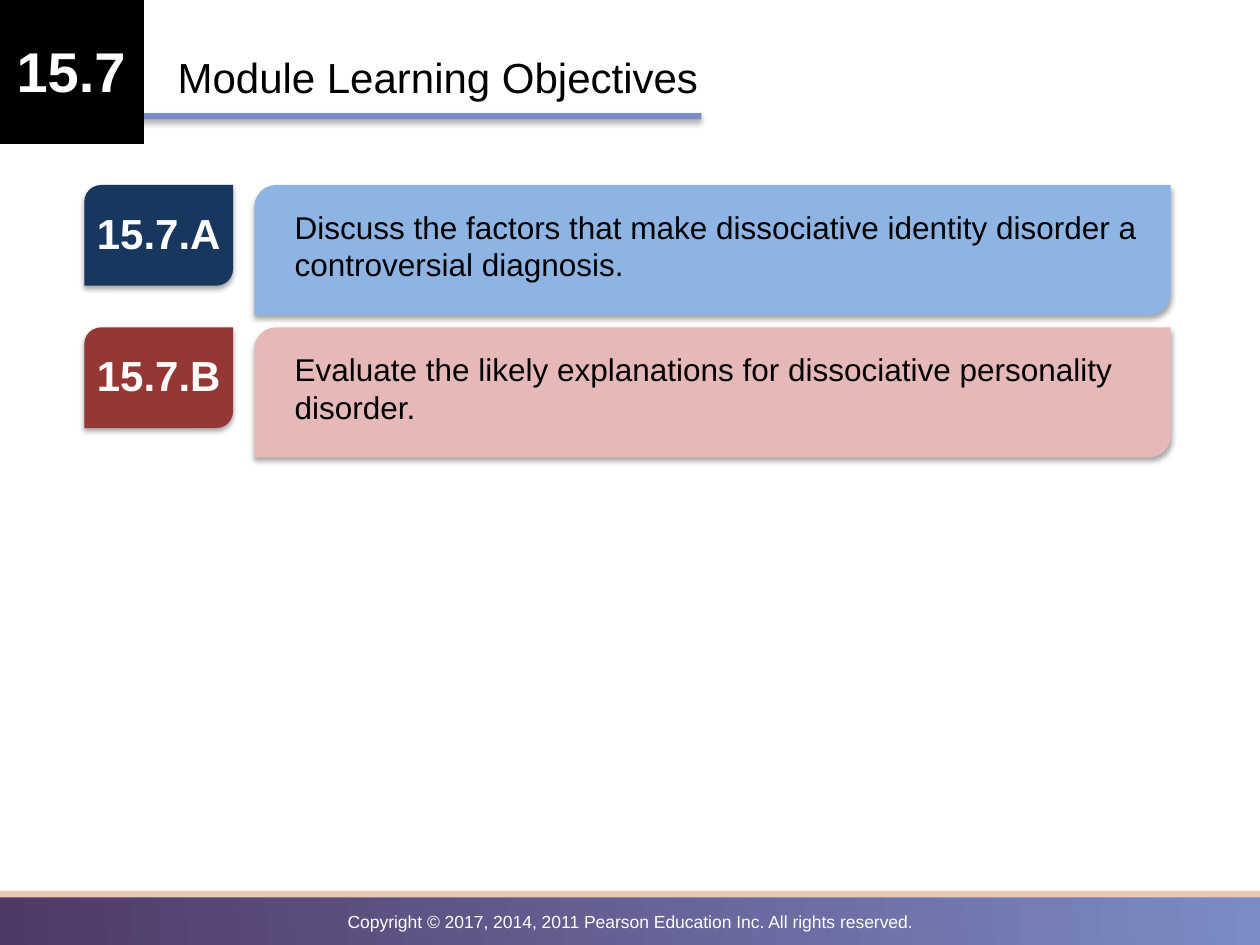
import pptx
import pptx.util
import pptx.dml.color
import pptx.enum.shapes
import pptx.enum.text
import pptx.oxml
import pptx.oxml.ns

Cm = pptx.util.Cm
Pt = pptx.util.Pt
KIND = pptx.enum.shapes.MSO_SHAPE
ALIGN = pptx.enum.text.PP_ALIGN

HUES = {
    "black": "000000",
    "white": "FFFFFF",
    "plum": "4F3967",
    "iris": "7C8BC4",
    "sand": "E7C8B3",
    "navy": "17375E",
    "sky": "8EB4E3",
    "brick": "953735",
    "rose": "E6B9B8",
}

GOALS = [
    ("15.7.A", "Discuss the factors that make dissociative identity disorder a "
     "controversial diagnosis.", "navy", "sky"),
    ("15.7.B", "Evaluate the likely explanations for dissociative personality "
     "disorder.", "brick", "rose"),
]

SHADE = (
    '<a:effectLst %s><a:outerShdw blurRad="40000" dist="23000" dir="5400000" '
    'rotWithShape="0"><a:srgbClr val="000000"><a:alpha val="35000"/>'
    '</a:srgbClr></a:outerShdw></a:effectLst>' % pptx.oxml.ns.nsdecls("a")
)


def hue(name):
    return pptx.dml.color.RGBColor.from_string(HUES[name])


def block(slide, box, fill, kind=KIND.RECTANGLE, shade=False):
    shape = slide.shapes.add_shape(kind, *map(Cm, box))
    shape.fill.solid()
    shape.fill.fore_color.rgb = hue(fill)
    shape.line.fill.background()
    if shade:
        shape._element.spPr.append(pptx.oxml.parse_xml(SHADE))
    else:
        shape.shadow.inherit = False
    return shape


def label(slide, box, text, size, tint="black", bold=False, mid=False):
    frame = slide.shapes.add_textbox(*map(Cm, box)).text_frame
    frame.word_wrap = True
    para = frame.paragraphs[0]
    para.text = text
    para.font.name = "Arial"
    para.font.size = Pt(size)
    para.font.bold = bold
    para.font.color.rgb = hue(tint)
    if mid:
        para.alignment = ALIGN.CENTER
        frame.margin_left = frame.margin_right = 0


def footer(slide):
    band = block(slide, (0, 17.98, 25.4, 1.14), "plum")
    band.fill.gradient()
    band.fill.gradient_angle = 4
    for stop, name, place in zip(band.fill.gradient_stops, ("plum", "iris"), (0, 1)):
        stop.color.rgb = hue(name)
        stop.position = place
    block(slide, (0, 17.96, 25.53, 0.13), "sand")
    label(slide, (0, 18.24, 25.4, 0.69),
          "Copyright © 2017, 2014, 2011 Pearson Education Inc. All rights reserved.",
          10, "white", mid=True)


def header(slide):
    block(slide, (-0.51, 2.28, 14.65, 0.13), "iris", shade=True)
    block(slide, (-0.03, -0.03, 2.93, 2.93), "black")
    label(slide, (-0.03, 0.61, 2.93, 1.63), "15.7", 32, "white", True, True)
    label(slide, (3.33, 0.91, 19.58, 1.27), "Module Learning Objectives", 24)


def goal(slide, top, code, text, dark, light):
    kind = KIND.ROUND_2_DIAG_RECTANGLE
    block(slide, (1.7, top, 3, 2.03), dark, kind, True)
    label(slide, (1.7, top + 0.33, 3, 1.27), code, 24, "white", True, True)
    block(slide, (5.13, top, 18.47, 2.62), light, kind, True)
    label(slide, (5.69, top + 0.33, 17.75, 1.8), text, 18)


def main():
    deck = pptx.Presentation()
    deck.slide_width = Cm(25.4)
    deck.slide_height = Cm(19.05)
    slide = deck.slides.add_slide(deck.slide_layouts[6])
    footer(slide)
    header(slide)
    for row, item in enumerate(GOALS):
        goal(slide, 3.73 + 2.87 * row, *item)
    deck.save("out.pptx")


if __name__ == "__main__":
    main()
